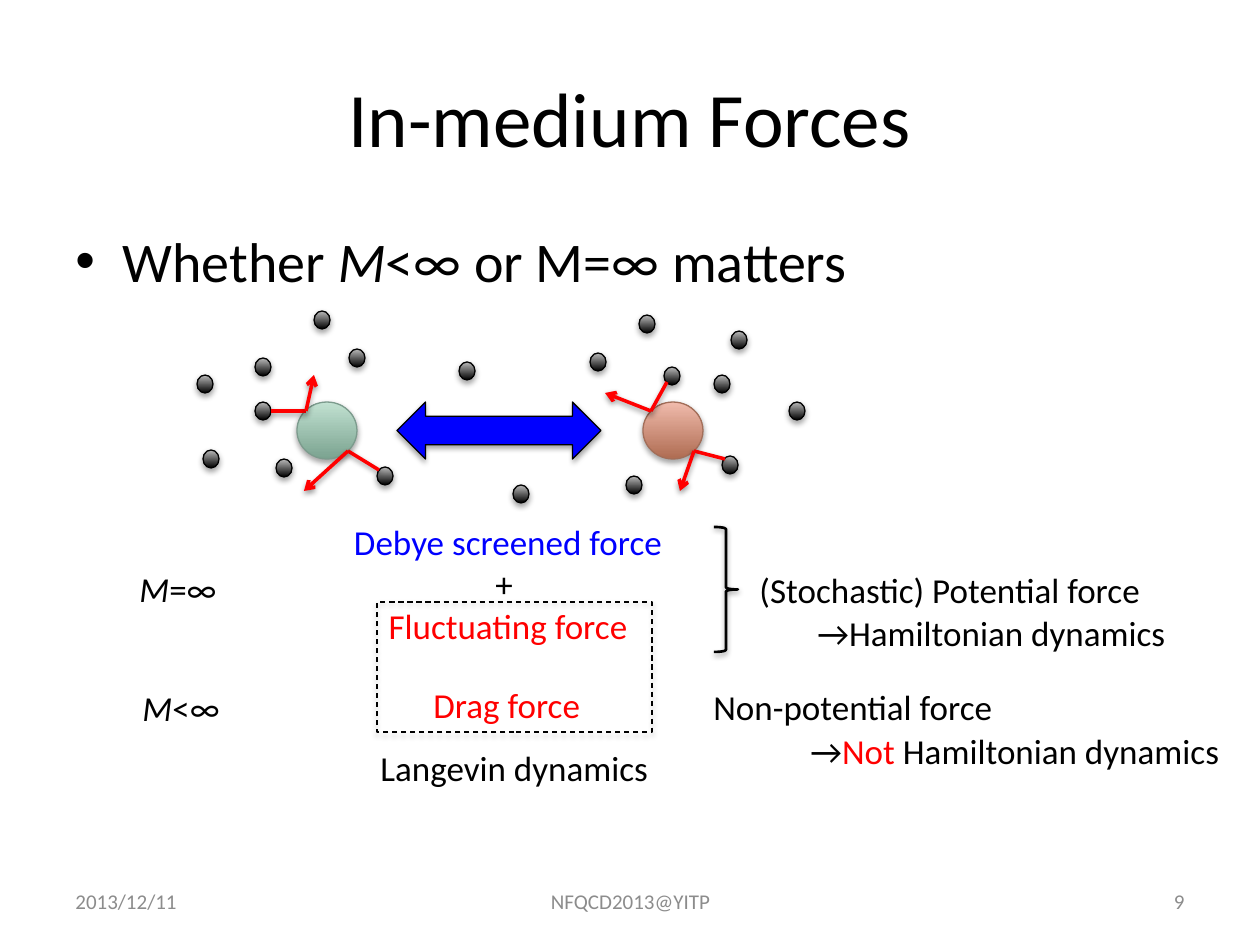
import pptx
import pptx.util
import pptx.dml.color
import pptx.enum.dml
import pptx.enum.shapes
import pptx.enum.text
import pptx.oxml
import pptx.oxml.ns
import itertools

SHAPE = pptx.enum.shapes.MSO_SHAPE
ALIGN = pptx.enum.text.PP_ALIGN
ANCHOR = pptx.enum.text.MSO_ANCHOR
PX = 914400 / 126
BLACK, RED, BLUE, GREY = "000000", "FF0000", "0000FF", "8C8C8C"

# Content: boxes are (left, top, width, height) in px
# A text is a list of paragraphs; a paragraph is a list of (words, format) runs
ITALIC = {"italic": True}
TITLE = [[("In-medium Forces", {})]]
POINT = [[("Whether ", {}), ("M", ITALIC), ("<∞ or M=∞ matters", {})]]
FOOTERS = [
    ((63, 876, 294, 50), "2013/12/11", ALIGN.LEFT),
    ((431, 876, 399, 50), "NFQCD2013@YITP", ALIGN.CENTER),
    ((903, 876, 294, 50), "9", ALIGN.RIGHT),
]

QUARKS = [((297, 402, 60, 57), ("7BA390", "C1E1D1"), "7C9B8D"),
          ((643, 402, 60, 57), ("AF6C52", "F0BBAC"), "A26E59")]
FORCE_ARROW = (397, 402, 204, 57)
PARTICLE_SIZE = (16, 18)
PARTICLE_FILL = (BLACK, "BDBDBD")
PARTICLES = [
    (255, 358), (255, 402), (349, 349), (276, 459), (203, 450), (377, 467),
    (459, 362), (590, 353), (626, 476), (664, 367), (722, 456), (714, 375),
    (639, 315), (197, 375), (789, 402), (731, 331), (513, 485), (314, 311),
]
# Each particle comes in, hits a quark and bounces off
COLLISIONS = [
    [(667, 382), (651, 411), (605, 393)],
    [(379, 470), (348, 451), (304, 491)],
    [(271, 411), (306, 411), (314, 375)],
    [(725, 459), (694, 451), (680, 491)],
]

BRACE = (714, 527, 24, 125)
LANGEVIN_FRAME = (377, 602, 275, 130)
FORCES = [
    ((339, 514, 338, 140), [[("Debye screened force", {"color": BLUE})], [("+ ", {})],
                            [("Fluctuating force", {"color": RED})]], ALIGN.CENTER),
    ((421, 677, 175, 55), [[("Drag force", {"color": RED})]], ALIGN.LEFT),
]
LANGEVIN = [((368, 740, 296, 55), [[("Langevin dynamics", {})]], ALIGN.LEFT)]
MASSES = [
    ((127, 561, 103, 55), [[("M", ITALIC), ("=∞", {})]], ALIGN.LEFT),
    ((130, 680, 103, 55), [[("M", ITALIC), ("<∞", {})]], ALIGN.LEFT),
]
POTENTIAL = [
    ((747, 562, 411, 55), [[("(Stochastic) Potential force", {})]], ALIGN.LEFT),
    ((805, 605, 379, 55), [[("→Hamiltonian dynamics", {})]], ALIGN.LEFT),
]
NON_POTENTIAL = [
    ((701, 679, 309, 55), [[("Non-potential force", {})]], ALIGN.LEFT),
    ((798, 723, 441, 55), [[("→", {}), ("Not", {"color": RED}),
                            (" Hamiltonian dynamics", {})]], ALIGN.LEFT),
]


def emu(lengths):
    return [round(length * PX) for length in lengths]


def rgb(color):
    return pptx.dml.color.RGBColor.from_string(color)


def add_xml(parent, xml):
    namespace = pptx.oxml.ns.nsdecls("a")
    parent.append(pptx.oxml.parse_xml(xml.replace(" ", f" {namespace} ", 1)))


def add_shadow(part, distance, alpha):
    add_xml(part._element.spPr,
            f'<a:effectLst ><a:outerShdw blurRad="40000" dist="{distance}" dir="5400000" '
            f'rotWithShape="0"><a:srgbClr val="000000"><a:alpha val="{alpha}000"/>'
            '</a:srgbClr></a:outerShdw></a:effectLst>')


def set_line(part, color, width):
    part.line.color.rgb = rgb(color)
    part.line.width = pptx.util.Pt(width)


def add_shape(owner, kind, box, fill=None, line=BLACK, width=0.75, dash=None,
              distance=23000, alpha=35):
    part = owner.add_shape(kind, *emu(box))
    if fill is None:
        part.fill.background()
    elif isinstance(fill, tuple):
        part.fill.gradient()
        part.fill.gradient_angle = 90
        for stop, color in zip(part.fill.gradient_stops, fill):
            stop.color.rgb = rgb(color)
    else:
        part.fill.solid()
        part.fill.fore_color.rgb = rgb(fill)
    set_line(part, line, width)
    if dash:
        part.line.dash_style = dash
    add_shadow(part, distance, alpha)


def add_ray(owner, start, end, arrow):
    ray = owner.add_connector(pptx.enum.shapes.MSO_CONNECTOR.STRAIGHT,
                              *emu(start + end))
    set_line(ray, RED, 2)
    if arrow:
        add_xml(ray._element.spPr.find(pptx.oxml.ns.qn("a:ln")), '<a:tailEnd type="arrow"/>')
    add_shadow(ray, 20000, 38)


def add_text(owner, box, paragraphs, size=20, color=BLACK, align=ALIGN.LEFT,
             anchor=ANCHOR.TOP, wrap=False, bullet=None):
    frame = owner.add_textbox(*emu(box)).text_frame
    frame.word_wrap = wrap
    frame.vertical_anchor = anchor
    if not wrap:
        frame.auto_size = pptx.enum.text.MSO_AUTO_SIZE.SHAPE_TO_FIT_TEXT
    for number, runs in enumerate(paragraphs):
        paragraph = frame.add_paragraph() if number else frame.paragraphs[0]
        paragraph.alignment = align
        if bullet:
            paragraph.space_before = pptx.util.Pt(size * 0.2)
            properties = paragraph._p.get_or_add_pPr()
            properties.set("marL", "342900")
            properties.set("indent", "-342900")
            add_xml(properties, '<a:buFont typeface="Arial"/>')
            add_xml(properties, f'<a:buChar char="{bullet}"/>')
        for words, style in runs:
            run = paragraph.add_run()
            run.text = words
            run.font.name = "Calibri"
            run.font.size = pptx.util.Pt(size)
            run.font.italic = style.get("italic", False)
            run.font.color.rgb = rgb(style.get("color", color))


def add_labels(owner, labels):
    for box, paragraphs, align in labels:
        add_text(owner, box, paragraphs, align=align)


def main():
    deck = pptx.Presentation()
    deck.slide_width, deck.slide_height = emu((1260, 945))
    shapes = deck.slides.add_slide(deck.slide_layouts[6]).shapes

    # Title and point
    add_text(shapes, (63, 38, 1134, 158), TITLE, size=44, align=ALIGN.CENTER,
             anchor=ANCHOR.MIDDLE, wrap=True)
    add_text(shapes, (63, 220, 1134, 624), POINT, size=32, wrap=True, bullet="•")

    # Quark pair in the medium
    medium = shapes.add_group_shape().shapes
    for box, fill, line in QUARKS:
        add_shape(medium, SHAPE.OVAL, box, fill, line)
    add_shape(medium, SHAPE.LEFT_RIGHT_ARROW, FORCE_ARROW, BLUE)
    for corner in PARTICLES:
        add_shape(medium, SHAPE.OVAL, corner + PARTICLE_SIZE, PARTICLE_FILL)
    for (start, hit, end), arrow in itertools.product(COLLISIONS, (False, True)):
        add_ray(medium, *((hit, end) if arrow else (start, hit)), arrow)

    # Forces and the dynamics they give
    add_labels(shapes.add_group_shape().shapes, FORCES)
    add_shape(shapes, SHAPE.RIGHT_BRACE, BRACE, width=1.5, distance=20000, alpha=38)
    langevin = shapes.add_group_shape().shapes
    add_shape(langevin, SHAPE.RECTANGLE, LANGEVIN_FRAME,
              dash=pptx.enum.dml.MSO_LINE.DASH)
    add_labels(langevin, LANGEVIN)
    add_labels(shapes, MASSES)
    for labels in (POTENTIAL, NON_POTENTIAL):
        add_labels(shapes.add_group_shape().shapes, labels)

    # Footer
    for box, words, align in FOOTERS:
        add_text(shapes, box, [[(words, {})]], size=12, color=GREY, align=align,
                 anchor=ANCHOR.MIDDLE, wrap=True)

    deck.save("out.pptx")


if __name__ == "__main__":
    main()
